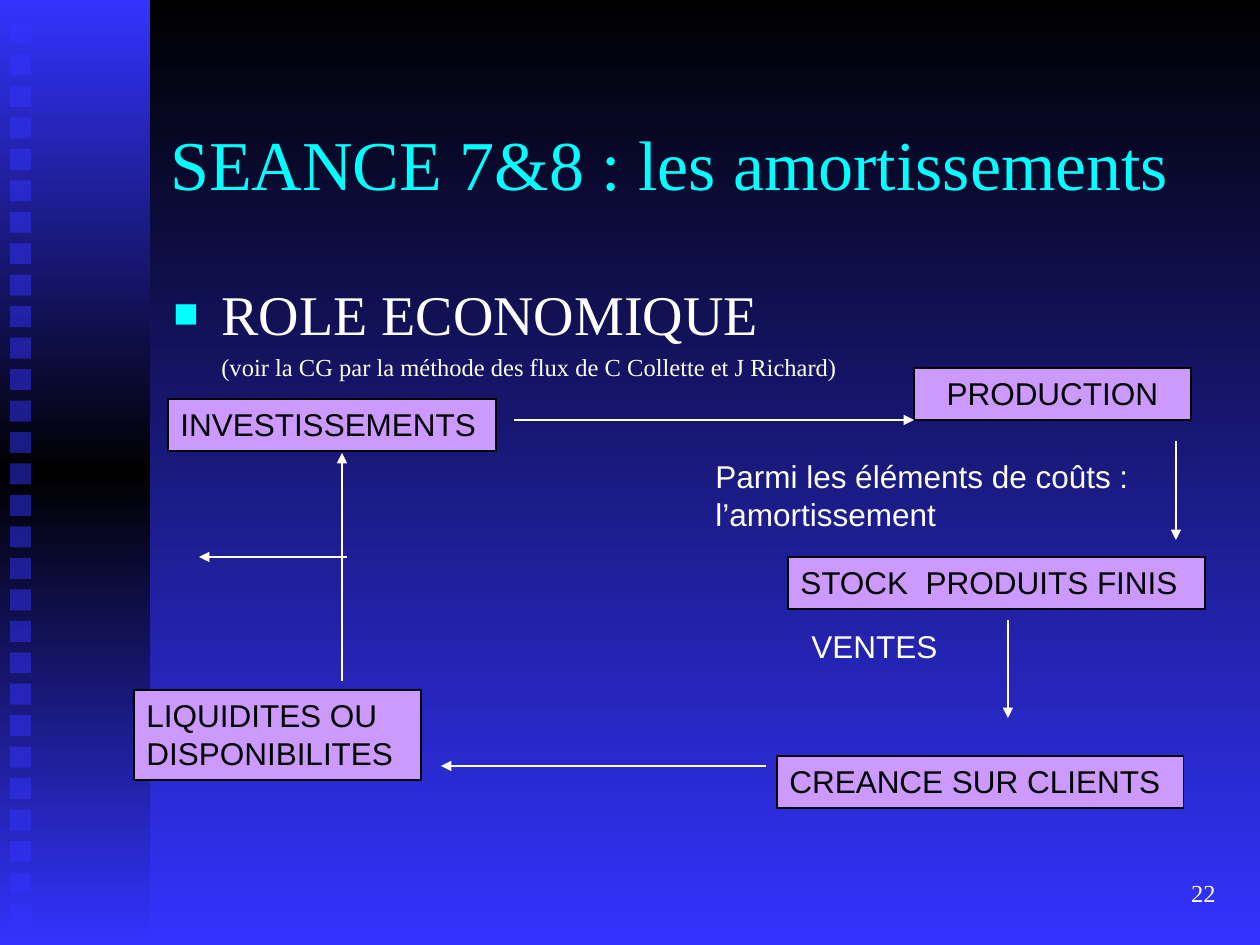
from lxml import etree
from pptx import Presentation
from pptx.dml.color import RGBColor
from pptx.enum.shapes import MSO_CONNECTOR, MSO_SHAPE
from pptx.enum.text import MSO_ANCHOR, PP_ALIGN
from pptx.oxml.ns import qn
from pptx.util import Emu, Pt

STRAIGHT = MSO_CONNECTOR.STRAIGHT
RECTANGLE = MSO_SHAPE.RECTANGLE
TOP, MIDDLE = MSO_ANCHOR.TOP, MSO_ANCHOR.MIDDLE
LEFT, CENTER, RIGHT = PP_ALIGN.LEFT, PP_ALIGN.CENTER, PP_ALIGN.RIGHT

WIDTH, HEIGHT = 1260, 945
SCALE = 914400 // 126
BLACK, BLUE, WHITE = "000000", "3333FF", "FFFFFF"
CYAN, LILAC = "00FFFF", "CC99FF"
SERIF, SANS = "Times New Roman", "Arial"

TITLE = "SEANCE 7&8 : les amortissements"
HEADING = "ROLE ECONOMIQUE"
REFERENCE = "(voir la CG par la méthode des flux de C Collette et J Richard)"
PAGE_NUMBER = "22"

STAGES = [
    ("INVESTISSEMENTS", (168, 399, 328, 52), LEFT),
    ("PRODUCTION", (914, 368, 277, 52), CENTER),
    ("STOCK  PRODUITS FINIS", (788, 557, 417, 52), LEFT),
    ("CREANCE SUR CLIENTS", (777, 756, 407, 52), LEFT),
    ("LIQUIDITES OU DISPONIBILITES", (134, 690, 287, 90), LEFT),
]
LABELS = [
    ("VENTES", (799, 621, 189, 50)),
    ("Parmi les éléments de coûts : l’amortissement", (703, 451, 469, 88)),
]
FLOWS = [
    ((1176, 441), (1176, 540)),
    ((1008, 620), (1008, 718)),
    ((766, 766), (441, 766)),
    ((342, 681), (342, 453)),
    ((347, 557), (199, 557)),
    ((514, 420), (914, 420)),
]
SQUARE_COUNT, SQUARE_SIZE = 29, 21
SQUARE_LEFT, FIRST_SQUARE_TOP, LAST_SQUARE_TOP = 10, 23, 904


def px(value):
    return Emu(round(value * SCALE))


def rgb(value):
    return RGBColor.from_string(value)


def add_child(parent, tag, **attributes):
    return etree.SubElement(parent, qn(tag), attributes)


def paint_gradient(fill, owner, colors):
    fill.gradient()
    fill.gradient_angle = 270
    stops = next(owner.iter(qn("a:gsLst")))
    for stop in list(stops):
        stops.remove(stop)
    for i, color in enumerate(colors):
        stop = add_child(stops, "a:gs", pos=str(100000 * i // (len(colors) - 1)))
        add_child(stop, "a:srgbClr", val=color)


def add_block(slide, place):
    block = slide.shapes.add_shape(RECTANGLE, *map(px, place))
    block.shadow.inherit = False
    block.line.fill.background()
    return block


def write(frame, text, size=18, font=SANS, color=WHITE, align=LEFT, anchor=TOP,
          before=0, indent=0, bullet=None, extra=False):
    frame.word_wrap = True
    frame.vertical_anchor = anchor
    paragraph = frame.add_paragraph() if extra else frame.paragraphs[0]
    paragraph.alignment = align
    paragraph.space_before = Pt(before)
    run = paragraph.add_run()
    run.text = text
    run.font.size = Pt(size)
    run.font.name = font
    run.font.color.rgb = rgb(color)
    properties = paragraph._p.get_or_add_pPr()
    properties.set("marL", str(px(indent)))
    properties.set("indent", str(-px(indent) if bullet else 0))
    if bullet:
        add_child(add_child(properties, "a:buClr"), "a:srgbClr", val=CYAN)
        add_child(properties, "a:buSzPct", val="75000")
        add_child(properties, "a:buFont", typeface=SANS)
        add_child(properties, "a:buChar", char=bullet)


def add_text(slide, place, text, **style):
    frame = slide.shapes.add_textbox(*map(px, place)).text_frame
    write(frame, text, **style)
    return frame


def add_flow(slide, start, end):
    flow = slide.shapes.add_connector(STRAIGHT, *map(px, start + end))
    flow.line.color.rgb = rgb(WHITE)
    flow.line.width = Pt(0.75)
    add_child(flow.line._get_or_add_ln(), "a:tailEnd", type="triangle")
    add_child(flow._element.spPr, "a:effectLst")


def main():
    deck = Presentation()
    deck.slide_width, deck.slide_height = px(WIDTH), px(HEIGHT)
    slide = deck.slides.add_slide(deck.slide_layouts[6])
    paint_gradient(slide.background.fill, slide._element, [BLACK, BLUE])

    band = add_block(slide, (0, 0, 150, HEIGHT))
    paint_gradient(band.fill, band._element, [BLUE, BLACK, BLUE])
    step = (LAST_SQUARE_TOP - FIRST_SQUARE_TOP) / (SQUARE_COUNT - 1)
    for i in range(SQUARE_COUNT):
        top = FIRST_SQUARE_TOP + i * step
        square = add_block(slide, (SQUARE_LEFT, top, SQUARE_SIZE, SQUARE_SIZE))
        square.fill.solid()
        square.fill.fore_color.rgb = rgb(BLUE)
        add_child(next(square._element.iter(qn("a:srgbClr"))), "a:alpha", val="50000")

    add_text(slide, (158, 84, 1071, 158), TITLE,
             size=40, font=SERIF, color=CYAN, anchor=MIDDLE)
    body = add_text(slide, (161, 273, 1071, 562), HEADING,
                    size=32, font=SERIF, indent=48, bullet="■")
    write(body, REFERENCE, size=14, font=SERIF, before=3, indent=48, extra=True)

    for name, place, align in STAGES:
        stage = add_block(slide, place)
        stage.fill.solid()
        stage.fill.fore_color.rgb = rgb(LILAC)
        stage.line.color.rgb = rgb(BLACK)
        stage.line.width = Pt(0.75)
        write(stage.text_frame, name, color=BLACK, align=align)
    for text, place in LABELS:
        add_text(slide, place, text)
    for start, end in FLOWS:
        add_flow(slide, start, end)
    add_text(slide, (966, 861, 262, 63), PAGE_NUMBER,
             size=14, font=SERIF, align=RIGHT, anchor=MIDDLE)

    deck.save("out.pptx")


if __name__ == "__main__":
    main()
